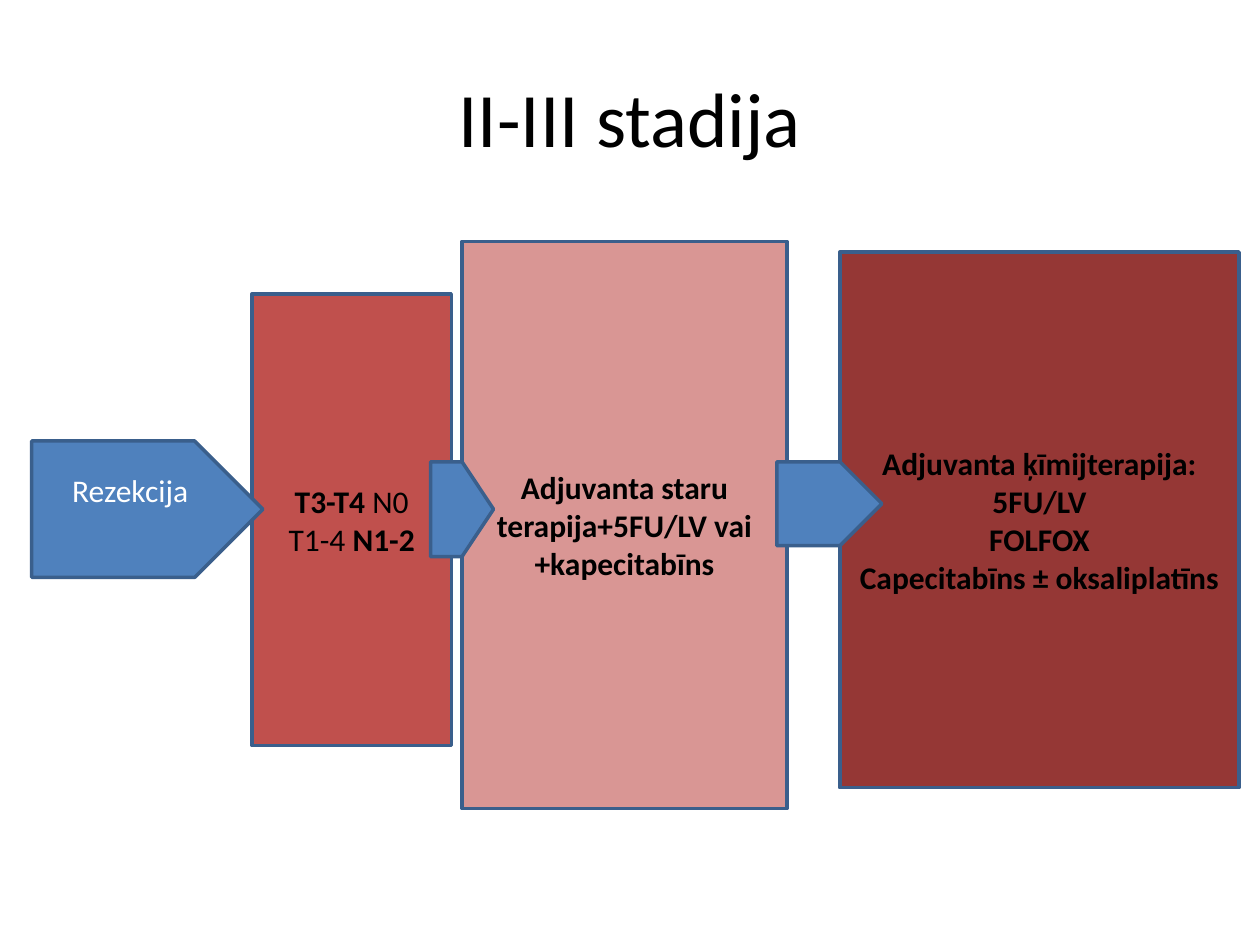
from dataclasses import dataclass

from pptx import Presentation
from pptx import util as u
from pptx.dml.color import RGBColor
from pptx.enum import shapes, text


@dataclass(frozen=True)
class Theme:
    font: str = "Calibri"
    title_size: int = 44
    body_size: int = 18
    black: str = "000000"
    white: str = "FFFFFF"
    arrow: str = "4F81BD"
    outline: str = "3A5F8C"
    stage: str = "C0504D"
    radiation: str = "D99694"
    chemo: str = "953735"


THEME = Theme()
BOX = shapes.MSO_SHAPE.RECTANGLE
ARROW = shapes.MSO_SHAPE.PENTAGON


def style_run(run, size, color, bold=False):
    run.font.name = THEME.font
    run.font.size = u.Pt(size)
    run.font.bold = bold
    run.font.color.rgb = RGBColor.from_string(color)


def add_step(slide, kind, place, fill, lines=(), color=THEME.black):
    """Add one step; lines hold (text, bold) runs and place is in centimetres."""
    step = slide.shapes.add_shape(kind, *map(u.Cm, place))
    step.shadow.inherit = False
    step.fill.solid()
    step.fill.fore_color.rgb = RGBColor.from_string(fill)
    step.line.color.rgb = RGBColor.from_string(THEME.outline)
    step.line.width = u.Pt(2)
    frame = step.text_frame
    frame.word_wrap = True
    frame.vertical_anchor = text.MSO_ANCHOR.MIDDLE
    for number, line in enumerate(lines):
        paragraph = frame.add_paragraph() if number else frame.paragraphs[0]
        paragraph.alignment = text.PP_ALIGN.CENTER
        for words, bold in line:
            run = paragraph.add_run()
            run.text = words
            style_run(run, THEME.body_size, color, bold)
    return step


deck = Presentation()
deck.slide_width, deck.slide_height = u.Cm(25.4), u.Cm(19.05)
slide = deck.slides.add_slide(deck.slide_layouts[5])

title = slide.shapes.title
title.left, title.top, title.width, title.height = map(u.Cm, (1.27, 0.76, 22.86, 3.18))
title.text_frame.text = "II-III stadija"
title.text_frame.vertical_anchor = text.MSO_ANCHOR.MIDDLE
heading = title.text_frame.paragraphs[0]
heading.alignment = text.PP_ALIGN.CENTER
style_run(heading.runs[0], THEME.title_size, THEME.black)

add_step(slide, BOX, (5.08, 5.93, 4.02, 9.1), THEME.stage, [
    [("T3-T4", True), (" N0", False)],
    [("T1-4 ", False), ("N1-2", True)],
])
add_step(slide, BOX, (9.31, 4.87, 6.56, 11.43), THEME.radiation, [
    [("Adjuvanta staru terapija+5FU/LV vai +kapecitabīns", True)],
])
resection = add_step(slide, ARROW, (0.64, 8.89, 4.66, 2.75), THEME.arrow,
                     [[("Rezekcija", False)]], THEME.white)
resection.text_frame.margin_bottom = u.Cm(0.9)  # lifts the label above the middle

chemo_lines = ["Adjuvanta ķīmijterapija:", "5FU/LV", "FOLFOX",
               "Capecitabīns ± oksaliplatīns"]
add_step(slide, BOX, (16.93, 5.08, 8.05, 10.8), THEME.chemo,
         [[(line, True)] for line in chemo_lines])

for place in [(15.66, 9.31, 2.12, 1.69), (8.68, 9.31, 1.27, 1.91)]:
    add_step(slide, ARROW, place, THEME.arrow)

deck.save("out.pptx")
